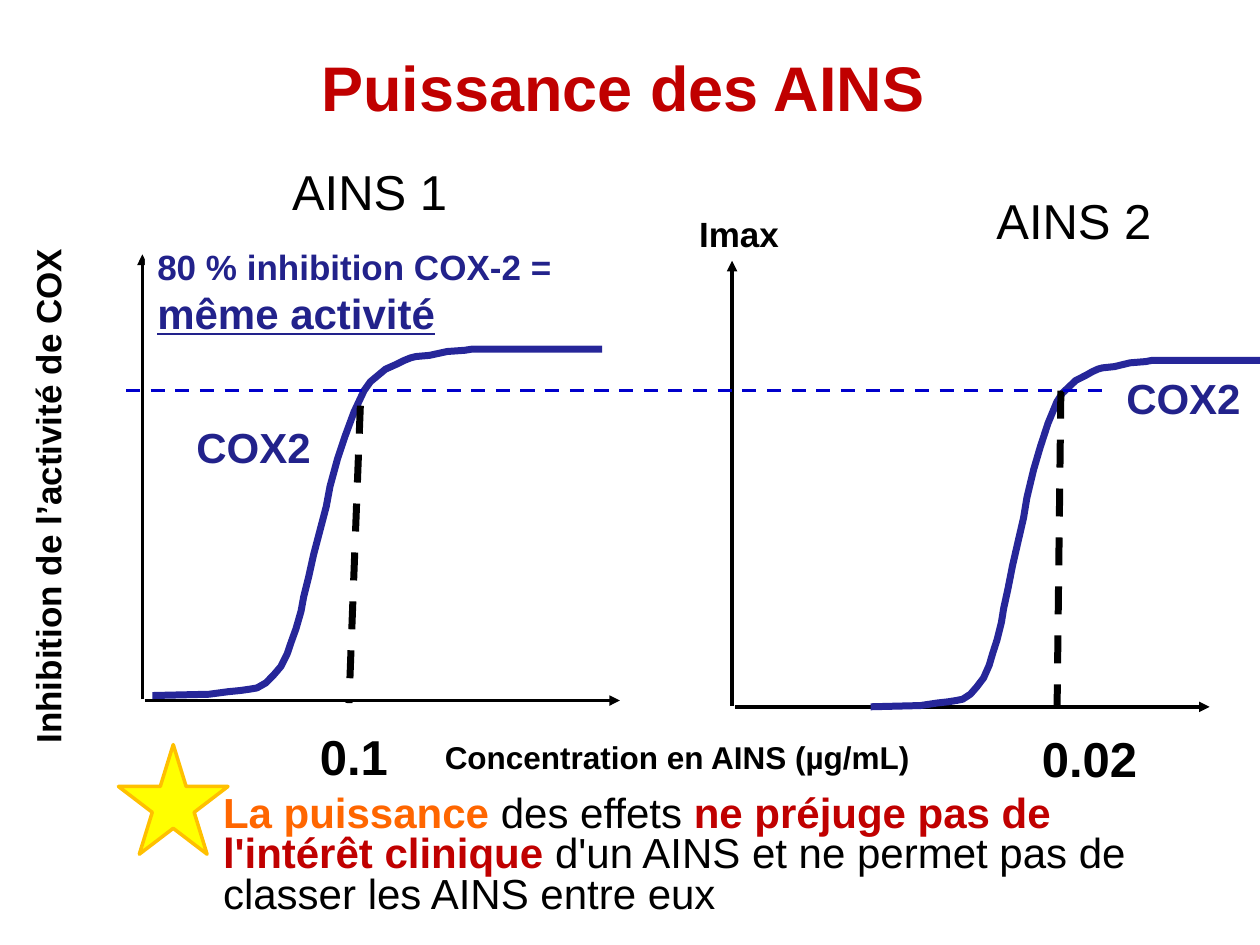
"""Build the slide comparing the potency of two AINS on COX-2."""
from lxml.etree import SubElement
from pptx import Presentation
from pptx.dml.color import RGBColor
from pptx.enum.dml import MSO_LINE
from pptx.enum.shapes import MSO_CONNECTOR, MSO_SHAPE
from pptx.enum.text import MSO_ANCHOR, MSO_AUTO_SIZE, PP_ALIGN
from pptx.oxml.ns import qn
from pptx.util import Inches, Pt

BLACK, NAVY, CURVE_BLUE, RED = "000000", "22228B", "262699", "C00000"
color = RGBColor.from_string


def add_runs(paragraph, runs):
    for text, size, hex_color, bold in runs:
        run = paragraph.add_run()
        run.text = text
        run.font.name = "Arial"
        run.font.size = Pt(size)
        run.font.bold = bold
        run.font.color.rgb = color(hex_color)


def add_line(start, end, hex_color, width, dashed=False, arrow=False):
    points = [Inches(value) for value in (*start, *end)]
    line = slide.shapes.add_connector(MSO_CONNECTOR.STRAIGHT, *points)
    line.line.color.rgb = color(hex_color)
    line.line.width = Pt(width)
    if dashed:
        line.line.dash_style = MSO_LINE.DASH
    if arrow:
        SubElement(line.line._get_or_add_ln(), qn("a:tailEnd"), type="triangle")
    SubElement(line._element.spPr, qn("a:effectLst"))


presentation = Presentation()
presentation.slide_width = Inches(10)
presentation.slide_height = Inches(7.5)
slide = presentation.slides.add_slide(presentation.slide_layouts[1])

title = slide.shapes.title
title.left, title.top = Inches(0.47), Inches(0.05)
title.width, title.height = Inches(8.95), Inches(1.35)
title.text_frame.vertical_anchor = MSO_ANCHOR.MIDDLE
title_paragraph = title.text_frame.paragraphs[0]
title_paragraph.alignment = PP_ALIGN.CENTER
title_paragraph.line_spacing = 0.9
add_runs(title_paragraph, [("Puissance des AINS", 36, RED, True)])

body = slide.placeholders[1]
body.left, body.top = Inches(1.28), Inches(6.27)
body.width, body.height = Inches(8.34), Inches(1.11)
body.text_frame.auto_size = MSO_AUTO_SIZE.NONE
message = body.text_frame.paragraphs[0]
message.line_spacing = 0.8
message.space_before = Pt(0)
properties = message._p.get_or_add_pPr()
properties.set("marL", str(Inches(0.39)))
properties.set("indent", str(Inches(-0.39)))
add_runs(message, [
    ("La puissance ", 24, "FF6600", True),
    ("des effets ", 24, BLACK, False),
    ("ne préjuge pas de l'intérêt clinique ", 24, RED, True),
    ("d'un AINS et ne permet pas de classer les AINS entre eux", 24, BLACK, False),
])

curve_points = [
    (1.21, 5.52), (1.66, 5.51), (1.81, 5.49), (1.91, 5.48), (1.98, 5.47),
    (2.04, 5.46), (2.11, 5.42), (2.17, 5.36), (2.23, 5.29), (2.28, 5.19),
    (2.31, 5.1), (2.35, 4.99), (2.39, 4.85), (2.41, 4.74), (2.45, 4.58),
    (2.49, 4.4), (2.54, 4.21), (2.59, 4.02), (2.62, 3.86), (2.68, 3.64),
    (2.74, 3.46), (2.81, 3.27), (2.89, 3.1), (2.94, 3.03), (3, 2.98),
    (3.06, 2.93), (3.15, 2.89), (3.21, 2.86), (3.26, 2.84), (3.3, 2.83),
    (3.41, 2.82), (3.55, 2.79), (3.69, 2.78), (3.75, 2.77), (4.78, 2.77),
]
curve_left = curve_points[0][0]

graphs = [
    (1.13, 2.02, 5.56, 4.92, 1.21, 1, 0, (2.86, 3.22), (2.77, 5.58)),
    (5.81, 2.07, 5.61, 9.6, 6.91, 0.88, 0.09, (8.42, 3.1), (8.39, 5.6)),
]
for axis_x, axis_top, axis_y, axis_right, left, stretch, drop, dose_top, dose_bottom in graphs:
    add_line((axis_x, axis_y - 0.01), (axis_x, axis_top), BLACK, 2, arrow=True)
    add_line((axis_x + 0.02, axis_y), (axis_right, axis_y), BLACK, 2, arrow=True)
    points = [(Inches(left + (x - curve_left) * stretch), Inches(y + drop))
              for x, y in curve_points]
    builder = slide.shapes.build_freeform(*points[0])
    builder.add_line_segments(points[1:], close=False)
    curve = builder.convert_to_shape()
    curve.shadow.inherit = False
    curve.fill.background()
    curve.line.color.rgb = color(CURVE_BLUE)
    curve.line.width = Pt(4)
    add_line(dose_top, dose_bottom, BLACK, 4, dashed=True)
add_line((1, 3.1), (8.78, 3.1), "0000CC", 2, dashed=True)

labels = [
    ("COX2", 1.46, 3.3, 1.13, 0.5, 24, NAVY, True),
    ("COX2", 8.84, 2.91, 1.18, 0.5, 24, NAVY, True),
    ("0.1", 2.44, 5.72, 1.22, 0.57, 28, BLACK, True),
    ("0.02", 8.17, 5.73, 1.22, 0.57, 28, BLACK, True),
    ("Concentration en AINS (µg/mL)", 3.04, 5.81, 4.67, 0.4, 18, BLACK, True),
    ("Inhibition de l’activité de COX", -1.7, 3.71, 4.15, 0.43, 20, BLACK, True),
    ("Imax", 5.45, 1.64, 1.31, 0.44, 20, BLACK, True),
    ("AINS 1", 2.22, 1.23, 1.55, 0.57, 28, BLACK, False),
    ("AINS 2", 7.81, 1.46, 1.55, 0.57, 28, BLACK, False),
]
for text, left, top, width, height, size, hex_color, bold in labels:
    label = slide.shapes.add_textbox(Inches(left), Inches(top), Inches(width), Inches(height))
    label.text_frame.word_wrap = not text.startswith(("Inhibition", "AINS"))
    paragraph = label.text_frame.paragraphs[0]
    add_runs(paragraph, [(text, size, hex_color, bold)])
    if text.startswith("Concentration"):
        paragraph.alignment = PP_ALIGN.CENTER
    if text.startswith("Inhibition"):
        label.rotation = 270

activity = slide.shapes.add_shape(
    MSO_SHAPE.RECTANGLE, Inches(1.15), Inches(1.9), Inches(3.77), Inches(0.84))
activity.shadow.inherit = False
activity.fill.solid()
activity.fill.fore_color.rgb = color("FFFFFF")
activity.line.fill.background()
activity.text_frame.word_wrap = True
activity.text_frame.vertical_anchor = MSO_ANCHOR.TOP
activity_paragraph = activity.text_frame.paragraphs[0]
activity_paragraph.alignment = PP_ALIGN.LEFT
add_runs(activity_paragraph, [
    ("80 % inhibition COX-2 = ", 20, NAVY, True),
    ("même activité", 24, NAVY, True),
])
activity_paragraph.runs[1].font.underline = True

star = slide.shapes.add_shape(
    MSO_SHAPE.STAR_5_POINT, Inches(0.94), Inches(5.91), Inches(0.87), Inches(0.87))
star.shadow.inherit = False
star.fill.solid()
star.fill.fore_color.rgb = color("FFFF00")
star.line.color.rgb = color("FFC000")
star.line.width = Pt(2)

presentation.save("out.pptx")
